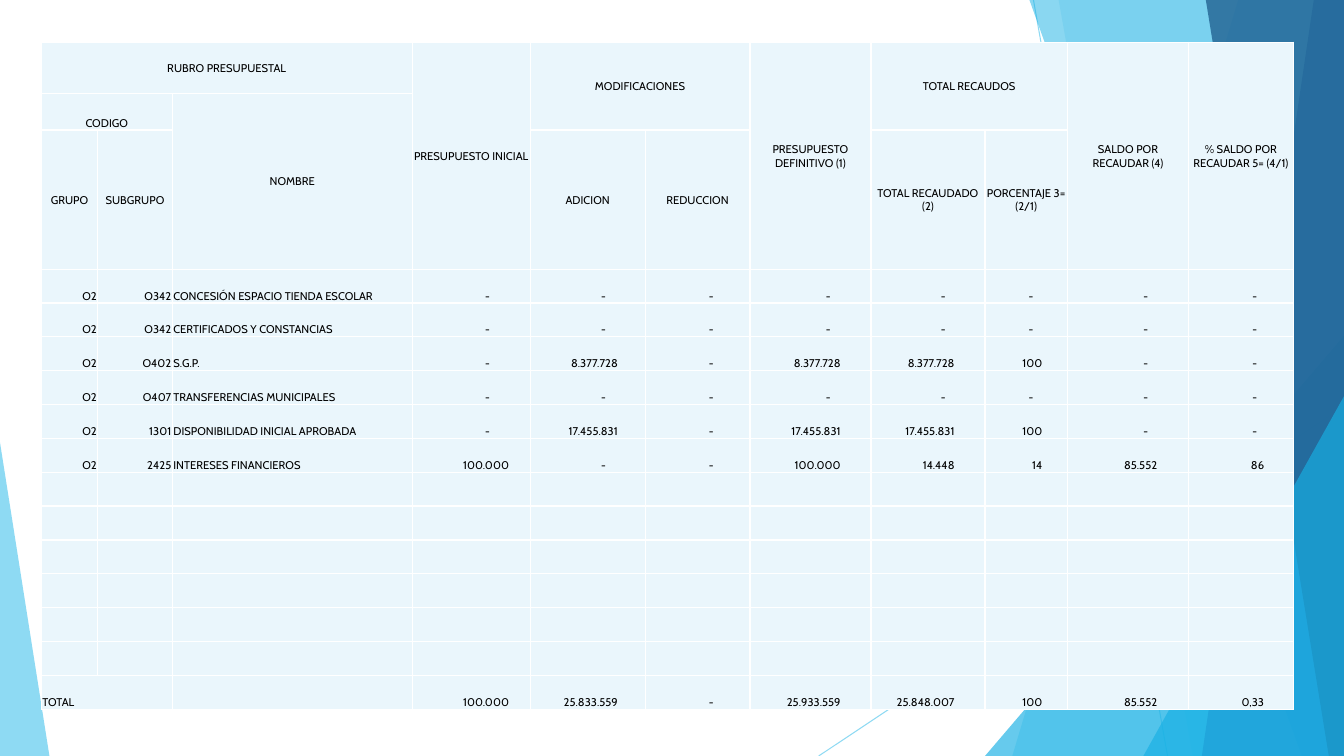
from lxml.etree import SubElement
from pptx import Presentation
from pptx.dml.color import RGBColor
from pptx.enum.shapes import MSO_CONNECTOR, MSO_SHAPE
from pptx.enum.text import MSO_ANCHOR, PP_ALIGN
from pptx.oxml import parse_xml
from pptx.oxml.ns import nsdecls, qn
from pptx.util import Inches, Pt

WIDTH, HEIGHT = 13.33, 7.5
COLORS = {
    "sky": "5FCBEF", "cyan": "17B0E4", "blue": "2E83C3", "navy": "226292",
    "cell": "EAF6FC", "border": "FFFFFF", "text": "000000",
}

COLUMN_WIDTHS = [0.56, 0.74, 2.38, 1.17, 1.14, 1.04, 1.2, 1.13, 0.82, 1.2, 1.04]
HEADER_HEIGHTS = [0.51, 0.36, 1.38]
BODY_ROWS = 13
BODY_HEIGHT = 4.37
FIRST_BODY_ROW = len(HEADER_HEIGHTS)
TOTAL_ROW = FIRST_BODY_ROW + BODY_ROWS - 1
FIRST_AMOUNT_COLUMN = 3
# Space to the right of the amounts and of the dashes, by column
AMOUNT_GAPS = [0.21, 0.27, 0.36, 0.3, 0.3, 0.25, 0.31, 0.29]
DASH_GAPS = [0.4, 0.39, 0.36, 0.4, 0.39, 0.34, 0.4, 0.36]

# Row, column, rows spanned, columns spanned, heading
HEADINGS = [
    (0, 0, 1, 3, "RUBRO PRESUPUESTAL"),
    (0, 3, 3, 1, "PRESUPUESTO INICIAL"),
    (0, 4, 2, 2, "MODIFICACIONES"),
    (0, 6, 3, 1, "PRESUPUESTO DEFINITIVO (1)"),
    (0, 7, 2, 2, "TOTAL RECAUDOS"),
    (0, 9, 3, 1, "SALDO POR RECAUDAR (4)"),
    (0, 10, 3, 1, "% SALDO POR RECAUDAR 5= (4/1)"),
    (1, 0, 1, 2, "CODIGO"),
    (1, 2, 2, 1, "NOMBRE"),
    (2, 0, 1, 1, "GRUPO"),
    (2, 1, 1, 1, "SUBGRUPO"),
    (2, 4, 1, 1, "ADICION"),
    (2, 5, 1, 1, "REDUCCION"),
    (2, 7, 1, 1, "TOTAL RECAUDADO (2)"),
    (2, 8, 1, 1, "PORCENTAJE 3= (2/1)"),
]
NO_AMOUNTS = ["-"] * 8
BUDGET_ITEMS = [
    ("O342", "CONCESIÓN ESPACIO TIENDA ESCOLAR", NO_AMOUNTS),
    ("O342", "CERTIFICADOS Y CONSTANCIAS", NO_AMOUNTS),
    ("O402", "S.G.P.",
     ["-", "8.377.728", "-", "8.377.728", "8.377.728", "100", "-", "-"]),
    ("O407", "TRANSFERENCIAS MUNICIPALES", NO_AMOUNTS),
    ("1301", "DISPONIBILIDAD INICIAL APROBADA",
     ["-", "17.455.831", "-", "17.455.831", "17.455.831", "100", "-", "-"]),
    ("2425", "INTERESES FINANCIEROS",
     ["100.000", "-", "-", "100.000", "14.448", "14", "85.552", "86"]),
]
TOTALS = ["100.000", "25.833.559", "-", "25.933.559", "25.848.007", "100",
          "85.552", "0,33"]


def set_alpha(color_parent, percent):
    color = next(color_parent.iter(qn("a:srgbClr")))
    SubElement(color, qn("a:alpha")).set("val", str(percent * 1000))


def paint(shape, color, alpha):
    shape.shadow.inherit = False
    shape.line.fill.background()
    shape.fill.solid()
    shape.fill.fore_color.rgb = RGBColor.from_string(COLORS[color])
    set_alpha(shape.fill._xPr, alpha)


def add_ray(slide, start, end):
    """Thin, translucent line behind the facets."""
    ray = slide.shapes.add_connector(
        MSO_CONNECTOR.STRAIGHT, *(Inches(v) for v in start + end))
    ray.line.color.rgb = RGBColor.from_string(COLORS["sky"])
    ray.line.width = Pt(0.75)
    properties = ray._element.spPr
    set_alpha(properties, 70)
    SubElement(properties, qn("a:effectLst"))


def add_facet(slide, top_left, bottom_left, color, alpha):
    """Full-height facet that reaches the right edge of the slide."""
    builder = slide.shapes.build_freeform(Inches(top_left), 0)
    corners = [(WIDTH, 0), (WIDTH, HEIGHT), (bottom_left, HEIGHT)]
    builder.add_line_segments([(Inches(x), Inches(y)) for x, y in corners])
    paint(builder.convert_to_shape(), color, alpha)


def add_corner(slide, left, top, width, apex, color, alpha):
    """Right triangle that stands on the bottom edge of the slide."""
    corner = slide.shapes.add_shape(
        MSO_SHAPE.ISOSCELES_TRIANGLE, Inches(left), Inches(top),
        Inches(width), Inches(HEIGHT - top))
    corner.adjustments[0] = apex
    paint(corner, color, alpha)


def add_background(slide):
    add_ray(slide, (10.25, 0), (11.58, HEIGHT))
    add_ray(slide, (WIDTH, 4.03), (8.12, HEIGHT))
    add_facet(slide, 12.28, 10.04, "sky", 36)
    add_facet(slide, 10.5, 11.83, "sky", 20)
    add_corner(slide, 9.77, 3.33, 3.56, 1, "cyan", 66)
    add_facet(slide, 10.21, 12.91, "cyan", 50)
    add_facet(slide, 13.03, 11.92, "blue", 70)
    add_facet(slide, 11.96, 13.18, "navy", 80)
    add_corner(slide, 11.34, 3.93, 1.99, 1, "cyan", 66)
    add_corner(slide, 0, 4.39, 0.49, 0, "sky", 70)


def style_cell(cell):
    cell.margin_left = cell.margin_right = cell.margin_top = Inches(0.01)
    cell.margin_bottom = 0
    properties = cell._tc.get_or_add_tcPr()
    for side in "LRTB":
        properties.append(parse_xml(
            f'<a:ln{side} {nsdecls("a")} w="12700"><a:solidFill>'
            f'<a:srgbClr val="{COLORS["border"]}"/></a:solidFill></a:ln{side}>'))
    cell.fill.solid()
    cell.fill.fore_color.rgb = RGBColor.from_string(COLORS["cell"])


def write(cell, text, align=PP_ALIGN.LEFT, anchor=MSO_ANCHOR.BOTTOM):
    cell.text_frame.text = text
    cell.vertical_anchor = anchor
    paragraph = cell.text_frame.paragraphs[0]
    paragraph.alignment = align
    font = paragraph.runs[0].font
    font.name = "Cabin"
    font.size = Pt(8)
    font.bold = False
    font.color.rgb = RGBColor.from_string(COLORS["text"])


def write_amounts(budget, row, amounts):
    gaps = zip(amounts, AMOUNT_GAPS, DASH_GAPS)
    for column, (amount, amount_gap, dash_gap) in enumerate(
            gaps, FIRST_AMOUNT_COLUMN):
        cell = budget.cell(row, column)
        write(cell, amount, PP_ALIGN.RIGHT)
        cell.margin_right = Inches(dash_gap if amount == "-" else amount_gap)


def write_headings(budget):
    for row, column, row_span, column_span, heading in HEADINGS:
        cell = budget.cell(row, column)
        if row_span * column_span > 1:
            cell.merge(budget.cell(row + row_span - 1, column + column_span - 1))
        anchor = MSO_ANCHOR.BOTTOM if heading == "CODIGO" else MSO_ANCHOR.MIDDLE
        write(cell, heading, PP_ALIGN.CENTER, anchor)


def add_budget(slide):
    heights = HEADER_HEIGHTS + [BODY_HEIGHT / BODY_ROWS] * BODY_ROWS
    budget = slide.shapes.add_table(
        len(heights), len(COLUMN_WIDTHS), Inches(0.41), Inches(0.42),
        Inches(sum(COLUMN_WIDTHS)), Inches(sum(heights))).table
    budget.first_row = budget.horz_banding = False
    for column, width in zip(budget.columns, COLUMN_WIDTHS):
        column.width = Inches(width)
    for row, height in zip(budget.rows, heights):
        row.height = Inches(height)
    for cell in budget.iter_cells():
        style_cell(cell)

    write_headings(budget)
    for row, (subgroup, name, amounts) in enumerate(BUDGET_ITEMS, FIRST_BODY_ROW):
        write(budget.cell(row, 0), "O2", PP_ALIGN.RIGHT)
        write(budget.cell(row, 1), subgroup, PP_ALIGN.RIGHT)
        write(budget.cell(row, 2), name)
        write_amounts(budget, row, amounts)
    total = budget.cell(TOTAL_ROW, 0)
    total.merge(budget.cell(TOTAL_ROW, 1))
    write(total, "TOTAL")
    write_amounts(budget, TOTAL_ROW, TOTALS)


def main():
    presentation = Presentation()
    presentation.slide_width = Inches(WIDTH)
    presentation.slide_height = Inches(HEIGHT)
    slide = presentation.slides.add_slide(presentation.slide_layouts[6])
    add_background(slide)
    add_budget(slide)
    presentation.save("out.pptx")


if __name__ == "__main__":
    main()
